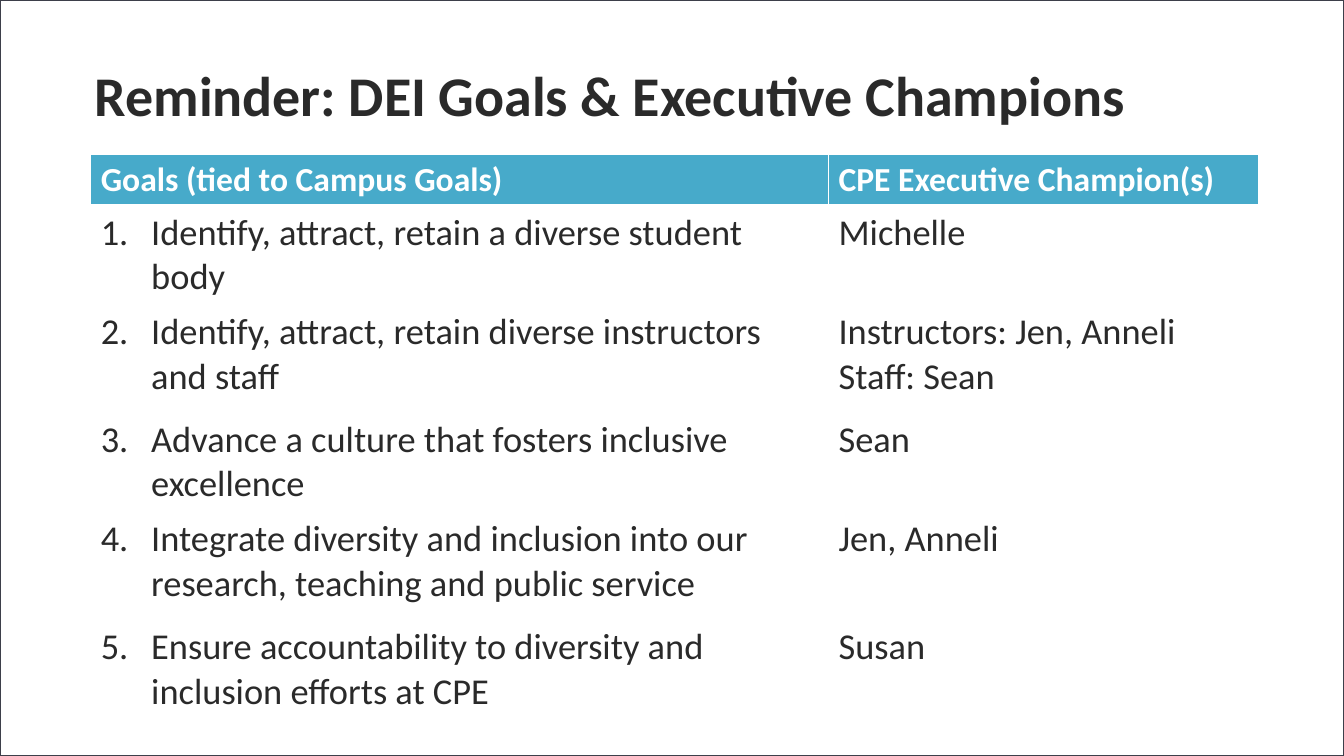
"""Build the slide that pairs each DEI goal with its executive champions."""
from dataclasses import dataclass

from lxml import etree
from pptx import Presentation
from pptx.dml.color import RGBColor
from pptx.enum import shapes, text
from pptx.oxml.ns import qn
from pptx.util import Pt

HEADING = "Reminder: DEI Goals & Executive Champions"
COLUMN_HEADS = ("Goals (tied to Campus Goals)", "CPE Executive Champion(s)")
GOALS = [
    ("Identify, attract, retain a diverse student body", ["Michelle"]),
    ("Identify, attract, retain diverse instructors and staff",
     ["Instructors: Jen, Anneli", "Staff: Sean"]),
    ("Advance a culture that fosters inclusive excellence", ["Sean"]),
    ("Integrate diversity and inclusion into our research, teaching and public service",
     ["Jen, Anneli"]),
    ("Ensure accountability to diversity and inclusion efforts at CPE", ["Susan"]),
]
SLIDE_SIZE = (960, 540)
HEADING_BOX = (60.5, 24.5, 834.5, 91.5)
TABLE_ORIGIN = (64.8, 110.2)
COLUMN_WIDTHS = (527, 307.5)
ROW_HEIGHTS = (35, 71, 77, 71, 77, 77)
NUMBER_INDENT = 36


@dataclass(frozen=True)
class Theme:
    """Colours, font and type sizes of the slide."""
    paper: str = "FFFFFF"
    ink: str = "2A2A2A"
    accent: str = "47AACA"
    frame: str = "3D3F4A"
    font: str = "Calibri"
    heading: int = 40
    column_head: int = 24
    body: int = 26


THEME = Theme()


def rgb(colour):
    """Turn a hex string into a colour."""
    return RGBColor.from_string(colour)


def write(paragraph, words, size, colour, bold=False):
    """Add one formatted run to a paragraph."""
    run = paragraph.add_run()
    run.text = words
    run.font.name = THEME.font
    run.font.size = Pt(size)
    run.font.bold = bold
    run.font.color.rgb = rgb(colour)


def number(paragraph, start):
    """Give a paragraph a hanging automatic number."""
    properties = paragraph._p.get_or_add_pPr()
    properties.set("marL", str(Pt(NUMBER_INDENT)))
    properties.set("indent", str(-Pt(NUMBER_INDENT)))
    etree.SubElement(properties, qn("a:buFont"), typeface="+mj-lt")
    etree.SubElement(properties, qn("a:buAutoNum"), type="arabicPeriod", startAt=str(start))


def style_cell(cell, fill, bottom_width):
    """Set the borders and fill of a cell."""
    properties = cell._tc.get_or_add_tcPr()
    for side, width in (("L", 1), ("R", 1), ("T", 1), ("B", bottom_width)):
        border = etree.SubElement(properties, qn(f"a:ln{side}"), w=str(Pt(width)))
        solid = etree.SubElement(border, qn("a:solidFill"))
        etree.SubElement(solid, qn("a:srgbClr"), val=THEME.paper)
    cell.fill.solid()
    cell.fill.fore_color.rgb = rgb(fill)


def add_heading(slide):
    """Place the title and the frame behind it."""
    heading = slide.shapes.title
    heading.left, heading.top, heading.width, heading.height = map(Pt, HEADING_BOX)
    frame = slide.shapes.add_shape(shapes.MSO_SHAPE.RECTANGLE, 0, 0, *map(Pt, SLIDE_SIZE))
    frame.shadow.inherit = False
    frame.fill.solid()
    frame.fill.fore_color.rgb = rgb(THEME.paper)
    frame.line.color.rgb = rgb(THEME.frame)
    frame.line.width = Pt(1)
    heading._element.addprevious(frame._element)

    body = heading.text_frame
    body.word_wrap = True
    body.auto_size = text.MSO_AUTO_SIZE.NONE
    body.vertical_anchor = text.MSO_ANCHOR.MIDDLE
    line = body.paragraphs[0]
    line.alignment = text.PP_ALIGN.LEFT
    line.line_spacing = 0.9
    write(line, HEADING, THEME.heading, THEME.ink, bold=True)


def add_goals(slide):
    """Place the table of goals and champions."""
    extent = (sum(COLUMN_WIDTHS), sum(ROW_HEIGHTS))
    table = slide.shapes.add_table(
        len(ROW_HEIGHTS), len(COLUMN_WIDTHS), *map(Pt, TABLE_ORIGIN + extent)).table
    table.horz_banding = False
    for column, width in zip(table.columns, COLUMN_WIDTHS):
        column.width = Pt(width)
    for row, height in zip(table.rows, ROW_HEIGHTS):
        row.height = Pt(height)

    for column, label in enumerate(COLUMN_HEADS):
        cell = table.cell(0, column)
        style_cell(cell, THEME.accent, 3)
        write(cell.text_frame.paragraphs[0], label, THEME.column_head, THEME.paper, bold=True)

    for position, (goal, champions) in enumerate(GOALS, 1):
        for column, lines in enumerate(([goal], champions)):
            cell = table.cell(position, column)
            style_cell(cell, THEME.paper, 1)
            for index, words in enumerate(lines):
                body = cell.text_frame
                line = body.add_paragraph() if index else body.paragraphs[0]
                if column == 0:
                    number(line, position)
                write(line, words, THEME.body, THEME.ink)


def main():
    """Build and save the presentation."""
    deck = Presentation()
    deck.slide_width, deck.slide_height = map(Pt, SLIDE_SIZE)
    slide = deck.slides.add_slide(deck.slide_layouts[5])
    add_heading(slide)
    add_goals(slide)
    deck.save("out.pptx")


if __name__ == "__main__":
    main()
